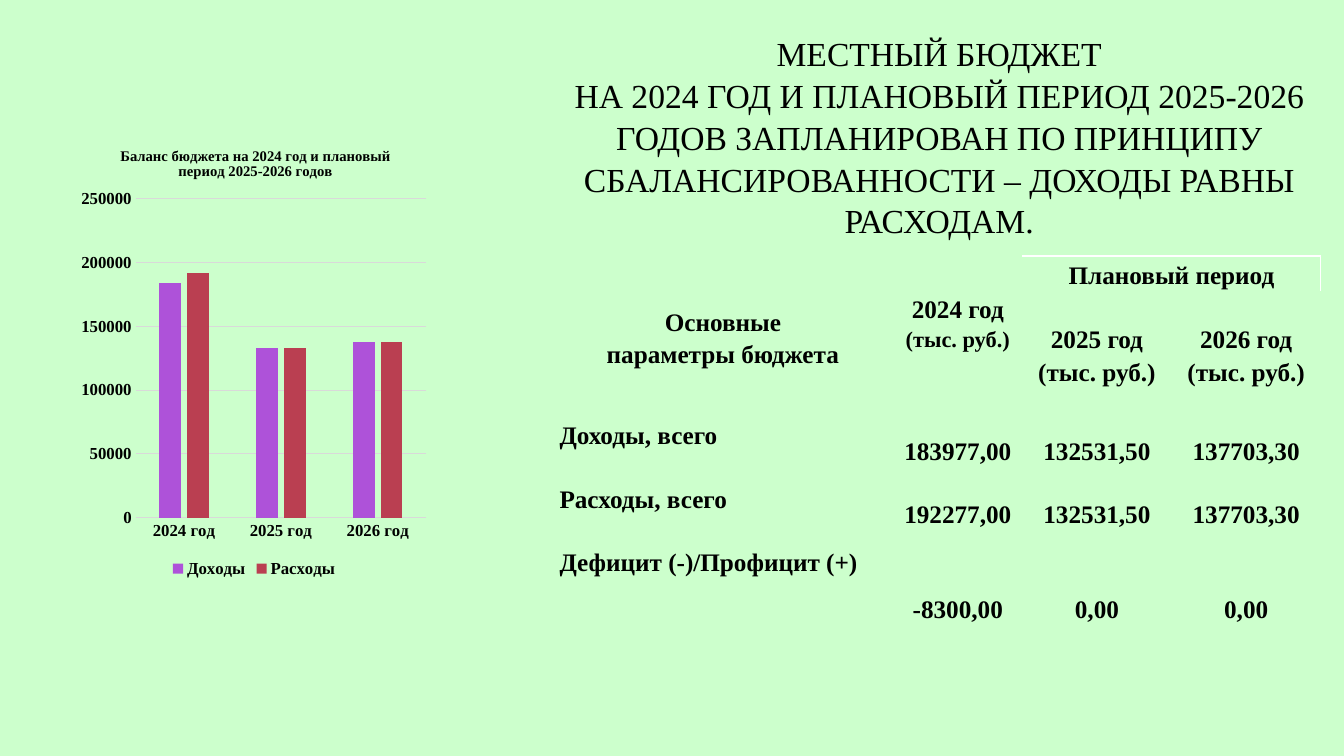
"""Build the slide on the balance of the local budget for 2024-2026."""
from lxml import etree
from pptx import Presentation
from pptx.chart.data import CategoryChartData
from pptx.dml.color import RGBColor
from pptx.enum.chart import XL_CHART_TYPE, XL_LEGEND_POSITION, XL_TICK_MARK
from pptx.enum.text import MSO_ANCHOR, PP_ALIGN
from pptx.oxml import parse_xml
from pptx.oxml.ns import nsdecls, qn
from pptx.util import Inches, Pt

THEME = {
    "font": "Times New Roman",
    "background": RGBColor.from_string("CCFFCC"),
    "text": RGBColor.from_string("000000"),
    "grid": RGBColor.from_string("D9D9D9"),
    "series": [RGBColor.from_string("AE52D9"), RGBColor.from_string("BA3F51")],
    "border": "FFFFFF",
    "heading": Pt(24),
    "table": Pt(18),
    "unit": Pt(16),
    "axis": Pt(12),
    "chart_title": Pt(10.5),
}
NO_STYLE = "{2D5ABB26-0587-4C30-8999-92F81FD0307C}"


def style(font, size, bold=True):
    values = {"name": THEME["font"], "size": THEME[size], "bold": bold}
    for name, value in values.items():
        setattr(font, name, value)
    font.color.rgb = THEME["text"]


def place(parent, index, **values):
    for old in parent.findall(qn("c:layout")):
        parent.remove(old)
    layout = parse_xml(f"<c:layout {nsdecls('c')}><c:manualLayout/></c:layout>")
    for tag, value in values.items():
        etree.SubElement(layout[0], qn(f"c:{tag}")).set("val", str(value))
    parent.insert(index, layout)


prs = Presentation()
prs.slide_width, prs.slide_height = Inches(13.33), Inches(7.5)
s = prs.slides.add_slide(prs.slide_layouts[6])
s.background.fill.solid()
s.background.fill.fore_color.rgb = THEME["background"]

sp = s.shapes.add_textbox(Inches(5.3), Inches(0.26), Inches(8.03), Inches(2.2))
tf = sp.text_frame
tf.word_wrap = True
p = tf.paragraphs[0]
p.text = (
    "МЕСТНЫЙ БЮДЖЕТ\v"
    "НА 2024 ГОД И ПЛАНОВЫЙ ПЕРИОД 2025-2026 ГОДОВ ЗАПЛАНИРОВАН "
    "ПО ПРИНЦИПУ СБАЛАНСИРОВАННОСТИ – ДОХОДЫ РАВНЫ РАСХОДАМ."
)
p.alignment, p.line_spacing = PP_ALIGN.CENTER, 1.04
for r in p.runs:
    style(r.font, "heading", bold=False)

rows = [
    ["Основные\nпараметры бюджета", "2024 год ", "Плановый период", ""],
    ["", "", "2025 год (тыс. руб.)", "2026 год (тыс. руб.)"],
    ["Доходы, всего", "183977,00", "132531,50", "137703,30"],
    ["Расходы, всего", "192277,00", "132531,50", "137703,30"],
    ["Дефицит (-)/Профицит (+)", "-8300,00", "0,00", "0,00"],
]
widths = [3.38, 1.28, 1.48, 1.48]
heights = [0.29, 1.26, 0.63, 0.63, 1.26]
table = s.shapes.add_table(
    len(rows), len(widths), Inches(5.48), Inches(2.54),
    Inches(sum(widths)), Inches(sum(heights)),
).table
table.first_row = table.horz_banding = False
table._tbl.tblPr.find(qn("a:tableStyleId")).text = NO_STYLE
for column, width in zip(table.columns, widths):
    column.width = Inches(width)
for row, height in zip(table.rows, heights):
    row.height = Inches(height)
for first, last in [((0, 0), (1, 0)), ((0, 1), (1, 1)), ((0, 2), (0, 3))]:
    table.cell(*first).merge(table.cell(*last))

for i, row in enumerate(rows):
    for j, text in enumerate(row):
        cell = table.cell(i, j)
        is_label = i > 1 and j == 0
        cell_format = {
            "margin_left": Inches(0.07), "margin_right": Inches(0.07),
            "margin_top": 0, "margin_bottom": 0,
            "vertical_anchor": MSO_ANCHOR.TOP if is_label else MSO_ANCHOR.MIDDLE,
        }
        for name, value in cell_format.items():
            setattr(cell, name, value)
        cell.fill.background()
        cell.text = text
        for p in cell.text_frame.paragraphs:
            p.alignment = PP_ALIGN.LEFT if is_label else PP_ALIGN.CENTER
            p.line_spacing = 1.15
            style(p.font, "table")
            for r in p.runs:
                style(r.font, "table")

year = table.cell(0, 1)
year.margin_bottom = Inches(0.29)
r = year.text_frame.paragraphs[0].add_run()
r.text = "(тыс. руб.)"
style(r.font, "unit")

for j in (2, 3):
    for side in ("lnT", "lnR"):
        line = parse_xml(
            f'<a:{side} {nsdecls("a")} w="12700"><a:solidFill>'
            f'<a:srgbClr val="{THEME["border"]}"/></a:solidFill></a:{side}>'
        )
        table.cell(0, j)._tc.tcPr.insert(0, line)

data = CategoryChartData()
data.categories = ["2024 год", "2025 год", "2026 год"]
data.add_series("Доходы", [184000, 133000, 138000])
data.add_series("Расходы", [192000, 133000, 138000])
chart = s.shapes.add_chart(
    XL_CHART_TYPE.COLUMN_CLUSTERED,
    Inches(0.74), Inches(1.25), Inches(3.56), Inches(4.52), data,
).chart
style(chart.font, "axis")

chart.has_title = True
p = chart.chart_title.text_frame.paragraphs[0]
r = p.add_run()
r.text = "Баланс бюджета на 2024 год и плановый период 2025-2026 годов"
style(r.font, "chart_title")
place(chart.chart_title._element, 1, xMode="edge", yMode="edge", x=0.12, y=0.04)

chart.has_legend = True
chart.legend.position = XL_LEGEND_POSITION.BOTTOM
chart.legend.include_in_layout = False
style(chart.legend.font, "axis")

plot = chart.plots[0]
plot.gap_width, plot.overlap, plot.vary_by_categories = 219, -27, False
for series, color in zip(plot.series, THEME["series"]):
    series.format.fill.solid()
    series.format.fill.fore_color.rgb = color
place(
    chart._chartSpace.chart.plotArea, 0, layoutTarget="inner",
    xMode="edge", yMode="edge", x=0.17, y=0.16, w=0.81, h=0.7,
)

for axis in (chart.category_axis, chart.value_axis):
    axis.major_tick_mark = axis.minor_tick_mark = XL_TICK_MARK.NONE
    style(axis.tick_labels.font, "axis")
axis_format = {"minimum_scale": 0, "maximum_scale": 250000, "major_unit": 50000}
for name, value in axis_format.items():
    setattr(chart.value_axis, name, value)
chart.value_axis.format.line.fill.background()
for lines in (chart.category_axis, chart.value_axis.major_gridlines):
    lines.format.line.color.rgb = THEME["grid"]
    lines.format.line.width = Pt(0.75)

prs.save("out.pptx")
